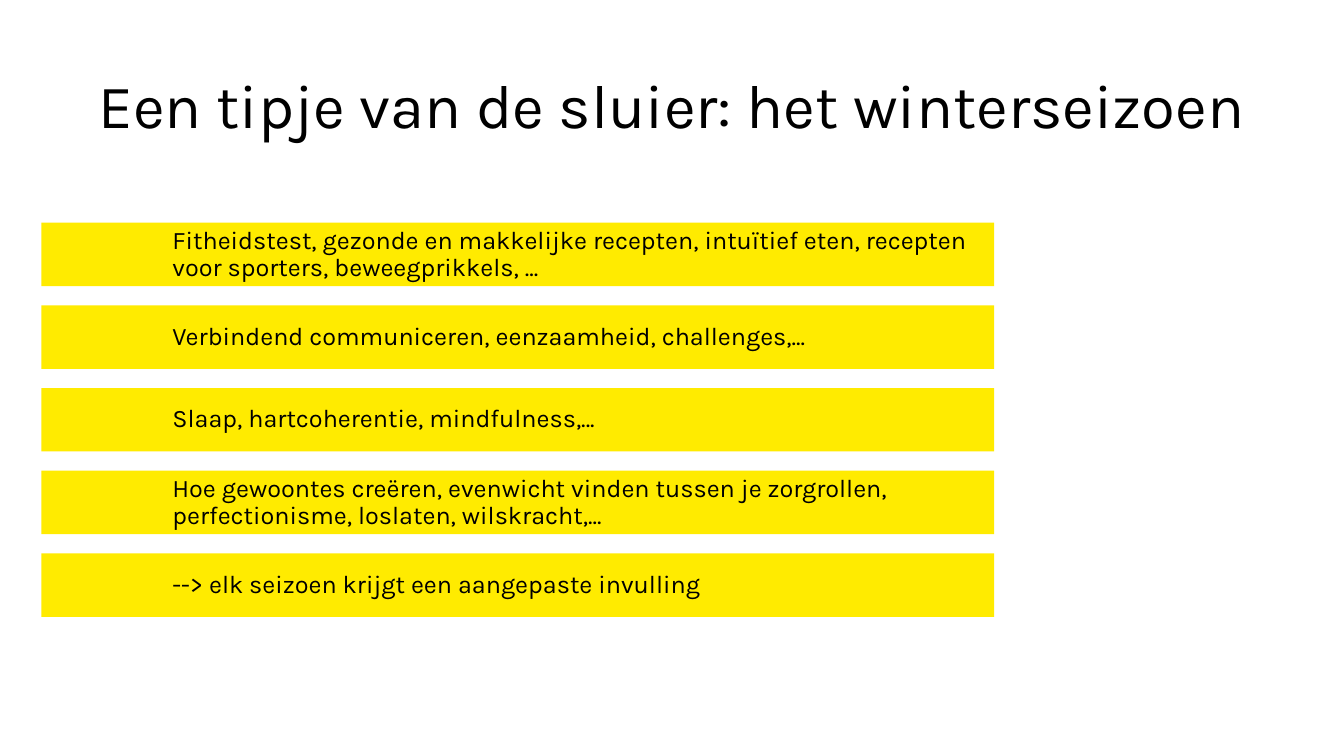
from pptx import Presentation
from pptx.dml.color import RGBColor
from pptx.enum.shapes import MSO_SHAPE as Shape
from pptx.enum.text import MSO_ANCHOR as Anchor, PP_ALIGN as Align
from pptx.util import Inches, Pt

BLACK = RGBColor(0x00, 0x00, 0x00)
YELLOW = RGBColor(0xFF, 0xEB, 0x00)
FONT = "Karla"
LEFT = 0.41

TITLE = "Een tipje van de sluier: het winterseizoen"
TOPICS = [
    "Fitheidstest, gezonde en makkelijke recepten, intuïtief eten, "
    "recepten voor sporters, beweegprikkels, ...",
    "Verbindend communiceren, eenzaamheid, challenges,...",
    "Slaap, hartcoherentie, mindfulness,...",
    "Hoe gewoontes creëren, evenwicht vinden tussen je zorgrollen, "
    "perfectionisme, loslaten, wilskracht,...",
    "--> elk seizoen krijgt een aangepaste invulling",
]
BAR_TOP, BAR_STEP = 2.21, 0.82


def fill_text(shape, text, size, align, spacing, insets):
    frame = shape.text_frame
    frame.word_wrap = True
    frame.vertical_anchor = Anchor.MIDDLE
    left, top, right, bottom = insets
    frame.margin_left, frame.margin_top = Inches(left), Inches(top)
    frame.margin_right, frame.margin_bottom = Inches(right), Inches(bottom)
    para = frame.paragraphs[0]
    para.alignment = align
    para.line_spacing = spacing
    run = para.add_run()
    run.text = text
    run.font.name = FONT
    run.font.size = Pt(size)
    run.font.color.rgb = BLACK


def add_title(slide, text):
    box = slide.shapes.add_textbox(
        Inches(LEFT), Inches(0.47), Inches(12.52), Inches(1.33))
    fill_text(box, text, 44, Align.CENTER, Pt(38), (0, 0, 0, 0))


def add_bar(slide, top, text):
    bar = slide.shapes.add_shape(
        Shape.RECTANGLE, Inches(LEFT), Inches(top), Inches(9.45), Inches(0.63))
    bar.shadow.inherit = False
    bar.fill.solid()
    bar.fill.fore_color.rgb = YELLOW
    bar.line.fill.background()
    fill_text(bar, text, 18, Align.LEFT, 0.9, (1.3, 0.04, 0.2, 0.04))


def main():
    deck = Presentation()
    deck.slide_width, deck.slide_height = Inches(13.33), Inches(7.5)
    slide = deck.slides.add_slide(deck.slide_layouts[6])

    # Heading
    add_title(slide, TITLE)

    # One yellow bar per topic
    for row, topic in enumerate(TOPICS):
        add_bar(slide, BAR_TOP + row * BAR_STEP, topic)

    deck.save("out.pptx")


if __name__ == "__main__":
    main()
